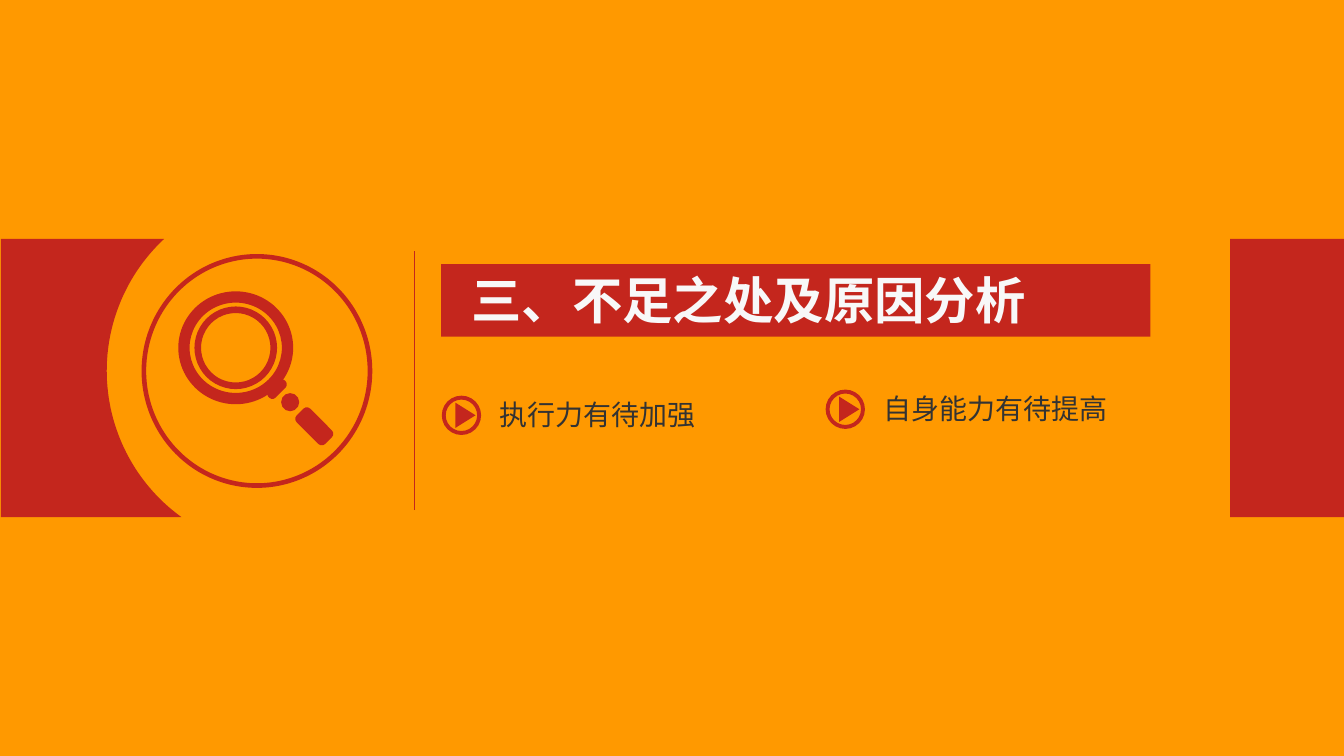
"""Build the section slide on shortcomings and their causes."""
import math
from dataclasses import dataclass

from lxml import etree
from pptx import Presentation
from pptx import util as u
from pptx.dml.color import RGBColor
from pptx.enum import shapes, text
from pptx.oxml.ns import qn

ORANGE = RGBColor(0xFF, 0x99, 0x00)
RED = RGBColor(0xC4, 0x26, 0x1D)
WHITE = RGBColor(0xF8, 0xF8, 0xF8)
GRAY = RGBColor(0x33, 0x33, 0x33)
PRESET = shapes.MSO_SHAPE
BAND_TOP, BAND_BOTTOM = 2.37, 5.13


@dataclass(frozen=True)
class Part:
    """A red preset shape placed by its centre."""
    kind: PRESET
    x: float
    y: float
    width: float
    height: float
    adjustment: float | None = None
    rotation: float = 0


@dataclass(frozen=True)
class Topic:
    """A play marker with its label."""
    label: str
    left: float
    top: float
    width: float


MAGNIFIER = [
    Part(PRESET.DONUT, 2.55, 3.68, 2.29, 2.32, 0.02),
    Part(PRESET.DONUT, 2.34, 3.45, 1.14, 1.12, 0.1),
    Part(PRESET.DONUT, 2.34, 3.45, 0.82, 0.82, 0.08),
    Part(PRESET.ROUNDED_RECTANGLE, 2.75, 3.86, 0.23, 0.1, 0.45, -45),
    Part(PRESET.OVAL, 2.88, 3.99, 0.18, 0.18),
    Part(PRESET.ROUNDED_RECTANGLE, 3.12, 4.23, 0.4, 0.19, 0.25, 45),
]
TOPICS = [
    Topic("执行力有待加强", 4.39, 3.93, 2.17),
    Topic("自身能力有待提高", 8.2, 3.87, 2.45),
]


def paint(shape) -> None:
    """Fill a shape in red without outline or shadow."""
    shape.shadow.inherit = False
    shape.fill.solid()
    shape.fill.fore_color.rgb = RED
    shape.line.fill.background()


def draw_part(slide, part: Part) -> None:
    """Draw one part around its centre."""
    shape = slide.shapes.add_shape(
        part.kind, u.Inches(part.x - part.width / 2), u.Inches(part.y - part.height / 2),
        u.Inches(part.width), u.Inches(part.height))
    if part.adjustment is not None:
        shape.adjustments[0] = part.adjustment
    shape.rotation = part.rotation
    paint(shape)


def draw_left_band(slide) -> None:
    """Draw the left band with a circular bite."""
    center_x, center_y, radius = 2.85, 3.68, 1.79
    start = math.asin((BAND_TOP - center_y) / radius)
    end = math.asin((BAND_BOTTOM - center_y) / radius)
    steps = 60
    angles = [start + (end - start) * step / steps for step in range(steps + 1)]
    bite = [(center_x - radius * math.cos(angle), center_y + radius * math.sin(angle))
            for angle in angles]
    outline = [(u.Inches(x), u.Inches(y)) for x, y in [*bite, (0.01, BAND_BOTTOM)]]
    builder = slide.shapes.build_freeform(u.Inches(0.01), u.Inches(BAND_TOP))
    builder.add_line_segments(outline, close=True)
    paint(builder.convert_to_shape())


def draw_divider(slide) -> None:
    """Draw the thin vertical line beside the magnifier."""
    divider = slide.shapes.add_connector(
        shapes.MSO_CONNECTOR.STRAIGHT, u.Inches(4.11), u.Inches(5.06),
        u.Inches(4.11), u.Inches(2.49))
    divider.line.color.rgb = RED
    divider.line.width = u.Pt(0.75)
    etree.SubElement(divider._element.spPr, qn("a:effectLst"))


def write(holder, words: str, *, left: float, top: float, width: float, height: float,
          size: float, font: str, color: RGBColor, bold: bool = False,
          wrap: bool = True) -> None:
    """Place a placeholder and write one formatted line in it."""
    holder.left, holder.top = u.Inches(left), u.Inches(top)
    holder.width, holder.height = u.Inches(width), u.Inches(height)
    frame = holder.text_frame
    frame.auto_size = text.MSO_AUTO_SIZE.NONE
    frame.word_wrap = wrap
    frame.vertical_anchor = text.MSO_ANCHOR.TOP
    frame.margin_left = frame.margin_right = u.Inches(0.1)
    frame.margin_top = frame.margin_bottom = u.Inches(0.05)
    line = frame.paragraphs[0]
    line.alignment = text.PP_ALIGN.LEFT
    line.space_before = u.Pt(0)
    properties = line._p.get_or_add_pPr()
    properties.set("marL", "0")
    properties.set("indent", "0")
    etree.SubElement(properties, qn("a:buNone"))
    run = line.add_run()
    run.text = words
    run.font.size, run.font.bold, run.font.name = u.Pt(size), bold, font
    run.font.color.rgb = color
    run_properties = run._r.get_or_add_rPr()
    run_properties.set("lang", "zh-CN")
    etree.SubElement(run_properties, qn("a:ea")).set("typeface", font)


def draw_topic(slide, holder, topic: Topic) -> None:
    """Draw a play marker and write its label."""
    center_x, center_y = topic.left + 0.19, topic.top + 0.19
    draw_part(slide, Part(PRESET.DONUT, center_x, center_y, 0.39, 0.39, 0.1))
    draw_part(slide, Part(PRESET.ISOSCELES_TRIANGLE, center_x + 0.04, center_y,
                          0.25, 0.2, rotation=90))
    write(holder, topic.label, left=topic.left + 0.47, top=topic.top - 0.04,
          width=topic.width, height=0.44, size=20, font="Arial", color=GRAY, wrap=False)


def main() -> None:
    """Assemble and save the slide."""
    deck = Presentation()
    deck.slide_width, deck.slide_height = u.Inches(13.34), u.Inches(7.5)
    slide = deck.slides.add_slide(deck.slide_layouts.get_by_name("Two Content"))
    slide.background.fill.solid()
    slide.background.fill.fore_color.rgb = ORANGE
    title, *labels = slide.placeholders

    draw_part(slide, Part(PRESET.RECTANGLE, 7.9, 2.98, 7.04, 0.72))
    slide.shapes._spTree.append(title._element)
    write(title, "三、不足之处及原因分析", left=4.58, top=2.62, width=5.91, height=0.71,
          size=36, font="Noto Sans CJK SC", color=WHITE, bold=True)
    draw_divider(slide)
    draw_left_band(slide)
    draw_part(slide, Part(PRESET.RECTANGLE, 12.775, (BAND_TOP + BAND_BOTTOM) / 2,
                          1.13, BAND_BOTTOM - BAND_TOP))
    for holder, topic in zip(labels, TOPICS):
        draw_topic(slide, holder, topic)
    for part in MAGNIFIER:
        draw_part(slide, part)
    deck.save("out.pptx")


if __name__ == "__main__":
    main()
